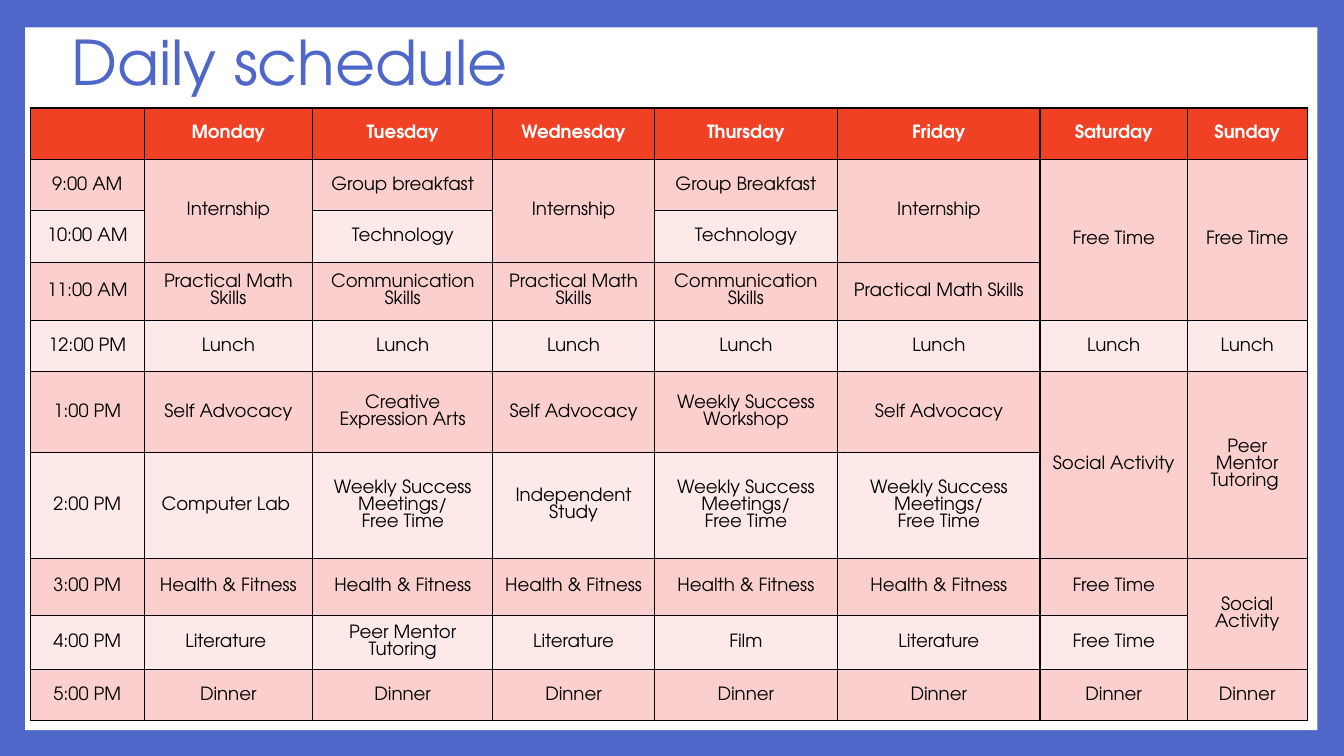
from lxml.etree import SubElement
from pptx import Presentation
from pptx.dml.color import RGBColor
from pptx.enum.shapes import MSO_SHAPE
from pptx.enum.text import MSO_ANCHOR, PP_ALIGN
from pptx.oxml.ns import qn
from pptx.util import Pt

FONT = "TeX Gyre Adventor"
BLUE, RED, PINK, PALE = "4E67C8", "F14124", "FACFCD", "FCE9E8"
BLACK, WHITE = "000000", "FFFFFF"

WIDTHS = [81.4, 120.2, 128.9, 115.2, 131, 144.7, 105.1, 85.7]
HEIGHTS = [36.72, 36.72, 36.72, 41.5, 36.72, 57.6, 75.6, 41, 36.72, 36.72]

UP = None  # the cell above reaches down into this one
MATH, TALK = "Practical Math Skills", "Communication Skills"
SELF, FIT = "Self Advocacy", "Health & Fitness"
MEET = "Weekly Success Meetings/\nFree Time"
FREE, SOCIAL = "Free Time", "Social Activity"
PLAN = [
    ["", "Monday", "Tuesday", "Wednesday", "Thursday", "Friday",
     "Saturday", "Sunday"],
    ["9:00 AM", "Internship", "Group breakfast", "Internship",
     "Group Breakfast", "Internship", FREE, FREE],
    ["10:00 AM", UP, "Technology", UP, "Technology", UP, UP, UP],
    ["11:00 AM", MATH, TALK, MATH, TALK, MATH, UP, UP],
    ["12:00 PM"] + ["Lunch"] * 7,
    ["1:00 PM", SELF, "Creative Expression Arts", SELF,
     "Weekly Success Workshop", SELF, SOCIAL, "Peer Mentor Tutoring "],
    ["2:00 PM", "Computer Lab ", MEET, "Independent Study", MEET, MEET,
     UP, UP],
    ["3:00 PM"] + [FIT] * 5 + [FREE, SOCIAL],
    ["4:00 PM", "Literature ", "Peer Mentor Tutoring", "Literature", "Film",
     "Literature", FREE, UP],
    ["5:00 PM"] + ["Dinner"] * 7,
]


def paint(fill, color):
    fill.solid()
    fill.fore_color.rgb = RGBColor.from_string(color)


def write(frame, text, size, color, bold=False, align=PP_ALIGN.LEFT):
    """Fill a text frame with one paragraph for each line of text."""
    for i, line in enumerate(text.split("\n")):
        para = frame.paragraphs[0] if i == 0 else frame.add_paragraph()
        para.alignment = align
        run = para.add_run()
        run.text = line
        run.font.name = FONT
        run.font.size = Pt(size)
        run.font.bold = bold
        run.font.color.rgb = RGBColor.from_string(color)


def border(cell, color, width):
    props = cell._tc.get_or_add_tcPr()
    for side in ("lnL", "lnR", "lnT", "lnB"):
        line = SubElement(props, qn("a:" + side), w=str(Pt(width)))
        SubElement(SubElement(line, qn("a:solidFill")), qn("a:srgbClr"),
                   val=color)


def draw_frame(slide, left, top, width, height):
    paint(slide.background.fill, BLUE)
    panel = slide.shapes.add_shape(MSO_SHAPE.RECTANGLE, Pt(left), Pt(top),
                                   Pt(width), Pt(height))
    panel.shadow.inherit = False
    paint(panel.fill, WHITE)
    panel.line.fill.background()


def draw_title(slide, left, top, width, height):
    box = slide.shapes.add_textbox(Pt(left), Pt(top), Pt(width), Pt(height))
    frame = box.text_frame
    frame.word_wrap = True
    frame.vertical_anchor = MSO_ANCHOR.MIDDLE
    write(frame, "Daily schedule", 44, BLUE)
    frame.paragraphs[0].line_spacing = 0.9


def draw_plan(slide, left, top):
    table = slide.shapes.add_table(
        len(HEIGHTS), len(WIDTHS), Pt(left), Pt(top),
        Pt(sum(WIDTHS)), Pt(sum(HEIGHTS))).table
    for col, width in zip(table.columns, WIDTHS):
        col.width = Pt(width)
    for row, height in zip(table.rows, HEIGHTS):
        row.height = Pt(height)
    for r, texts in enumerate(PLAN):
        head = r == 0
        for c, text in enumerate(texts):
            cell = table.cell(r, c)
            border(cell, BLACK, 1)
            paint(cell.fill, RED if head else PINK if r % 2 else PALE)
            cell.vertical_anchor = MSO_ANCHOR.MIDDLE
            if text:
                write(cell.text_frame, text, 13, WHITE if head else BLACK,
                      head, PP_ALIGN.CENTER)
            last = r
            while last + 1 < len(PLAN) and PLAN[last + 1][c] is UP:
                last += 1
            if text is not UP and last > r:
                cell.merge(table.cell(last, c))


def main():
    deck = Presentation()
    deck.slide_width, deck.slide_height = Pt(960), Pt(540)
    slide = deck.slides.add_slide(deck.slide_layouts[6])
    draw_frame(slide, 18, 19.5, 923, 502)
    draw_title(slide, 44, -11.5, 756, 116.6)
    draw_plan(slide, 21.6, 77.2)
    deck.save("out.pptx")


if __name__ == "__main__":
    main()
